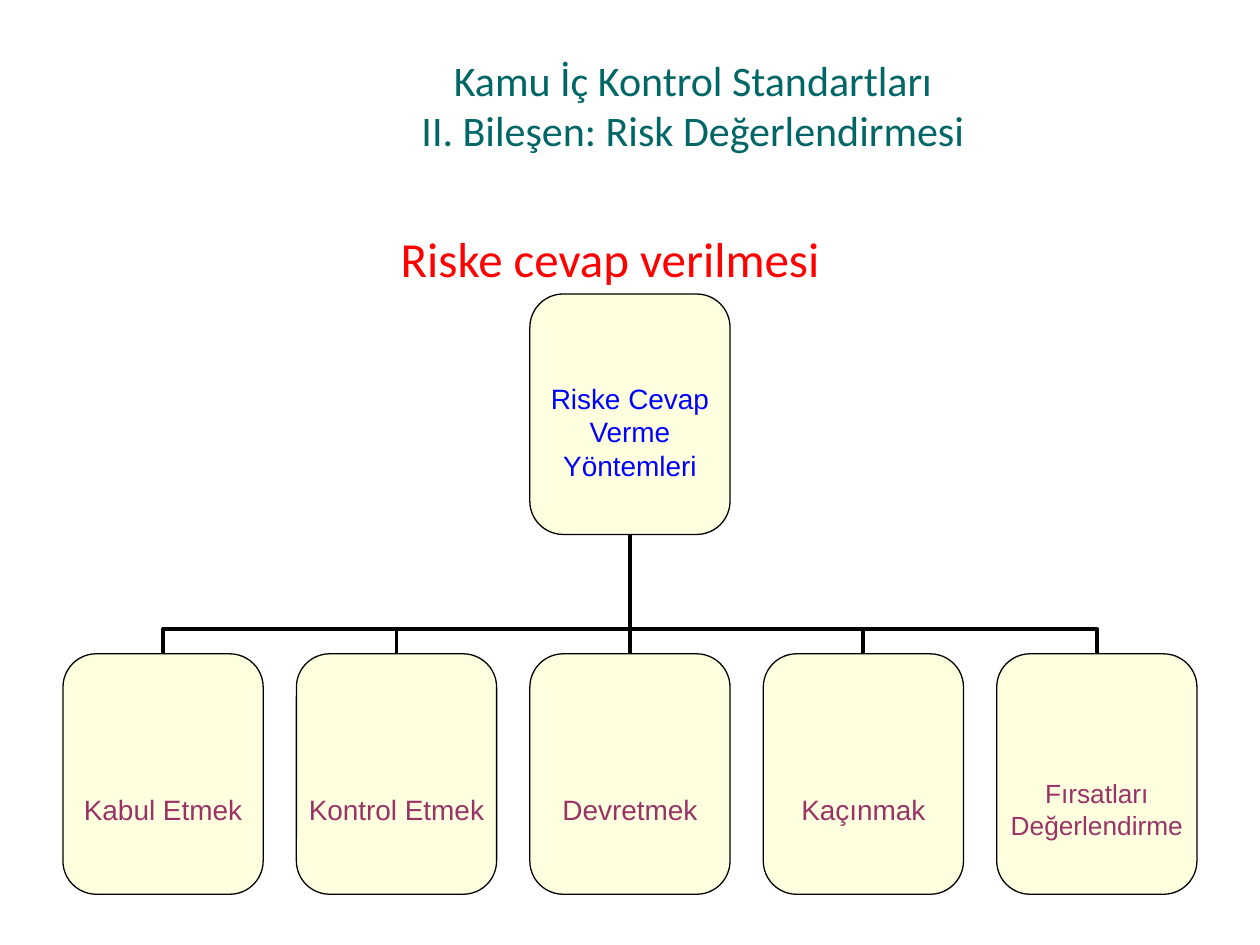
from dataclasses import dataclass
from lxml.etree import SubElement
from pptx import Presentation
from pptx.dml.color import RGBColor
from pptx.enum.shapes import MSO_CONNECTOR as Conn, MSO_SHAPE as Shape
from pptx.enum.text import MSO_ANCHOR as Anchor, PP_ALIGN as Align
from pptx.oxml.ns import qn
from pptx.util import Pt


@dataclass(frozen=True)
class Theme:
    title: str = "006666"
    heading: str = "FF0000"
    root: str = "0000FF"
    method: str = "993366"
    card: str = "FFFF99"
    line: str = "000000"
    card_alpha: int = 30000
    title_size: int = 24
    heading_size: int = 28
    card_size: int = 16
    small_size: int = 15
    text_font: str = "Calibri"
    card_font: str = "Arial"


T = Theme()
ROOT = "Riske Cevap Verme Yöntemleri"
METHODS = [
    ("Kabul Etmek", T.card_size),
    ("Kontrol Etmek", T.card_size),
    ("Devretmek", T.card_size),
    ("Kaçınmak", T.card_size),
    ("Fırsatları Değerlendirme", T.small_size),
]
CARD_W, CARD_H = 114.4, 137.4
BEND = 20800  # share of the way from a method up to the root, in 1/100000


def style_text(tf, text, font, size, color, align, anchor):
    tf.word_wrap = True
    tf.vertical_anchor = anchor
    p = tf.paragraphs[0]
    p.text = text
    p.alignment = align
    p.font.name, p.font.size = font, Pt(size)
    p.font.color.rgb = RGBColor.from_string(color)


def add_label(s, box, text, size, color, align, anchor, indent=7.2):
    tf = s.shapes.add_textbox(*map(Pt, box)).text_frame
    tf.margin_left = Pt(indent)
    style_text(tf, text, T.text_font, size, color, align, anchor)


def add_card(s, x, y, text, size, color, drop):
    """Rounded card whose text is centred below a top inset of drop points."""
    sp = s.shapes.add_shape(Shape.ROUNDED_RECTANGLE, Pt(x), Pt(y), Pt(CARD_W), Pt(CARD_H))
    sp.shadow.inherit = False
    sp.fill.solid()
    sp.fill.fore_color.rgb = RGBColor.from_string(T.card)
    srgb = sp.fill._xPr.find(f".//{qn('a:srgbClr')}")
    SubElement(srgb, qn("a:alpha"), val=str(T.card_alpha))
    sp.line.color.rgb = RGBColor.from_string(T.line)
    sp.line.width = Pt(0.75)
    tf = sp.text_frame
    tf.margin_left = tf.margin_right = tf.margin_bottom = 0
    tf.margin_top = Pt(drop)
    style_text(tf, text, T.card_font, size, color, Align.CENTER, Anchor.MIDDLE)
    return sp


def style_line(cx):
    cx.line.color.rgb = RGBColor.from_string(T.line)
    cx.line.width = Pt(2.25)
    SubElement(cx._element.spPr, qn("a:effectLst"))


def link_straight(s, child, parent):
    cx = s.shapes.add_connector(Conn.STRAIGHT, 0, 0, 0, 0)
    cx.begin_connect(child, 0)
    cx.end_connect(parent, 2)
    style_line(cx)


def link_elbow(s, child, parent):
    """Elbow from child top to parent bottom, turned so that it leaves vertically."""
    x1, y1 = child.left + child.width // 2, child.top
    x2, y2 = parent.left + parent.width // 2, parent.top + parent.height
    mx, my = (x1 + x2) // 2, (y1 + y2) // 2
    turn = 1 if x1 > x2 else -1
    dx, dy = turn * (x1 - mx), turn * (y1 - my)
    cx = s.shapes.add_connector(Conn.ELBOW, mx + dy, my - dx, mx - dy, my + dx)
    sp_pr = cx._element.spPr
    sp_pr.find(qn("a:xfrm")).set("rot", str(90 * 60000 if turn > 0 else 270 * 60000))
    guides = sp_pr.find(qn("a:prstGeom")).get_or_add_avLst()
    SubElement(guides, qn("a:gd"), name="adj1", fmla=f"val {BEND}")
    style_line(cx)


def add_tree(s, x, y, w, h):
    root = add_card(s, x + (w - CARD_W) / 2, y, ROOT, T.card_size, T.root, 20)
    step = (w - CARD_W) / (len(METHODS) - 1)
    for i, (text, size) in enumerate(METHODS):
        card = add_card(s, x + i * step, y + h - CARD_H, text, size, T.method, 40)
        link = link_straight if i == len(METHODS) // 2 else link_elbow
        link(s, card, root)


def main():
    prs = Presentation()
    prs.slide_width, prs.slide_height = Pt(720), Pt(540)
    s = prs.slides.add_slide(prs.slide_layouts[6])
    add_label(s, (108, 24, 576, 72),
              "Kamu İç Kontrol Standartları\vII. Bileşen: Risk Değerlendirmesi",
              T.title_size, T.title, Align.CENTER, Anchor.MIDDLE)
    add_tree(s, 36, 168, 648, 343)
    add_label(s, (84, 114, 576, 54), "Riske cevap verilmesi",
              T.heading_size, T.heading, Align.LEFT, Anchor.BOTTOM, indent=145)
    prs.save("out.pptx")


if __name__ == "__main__":
    main()
